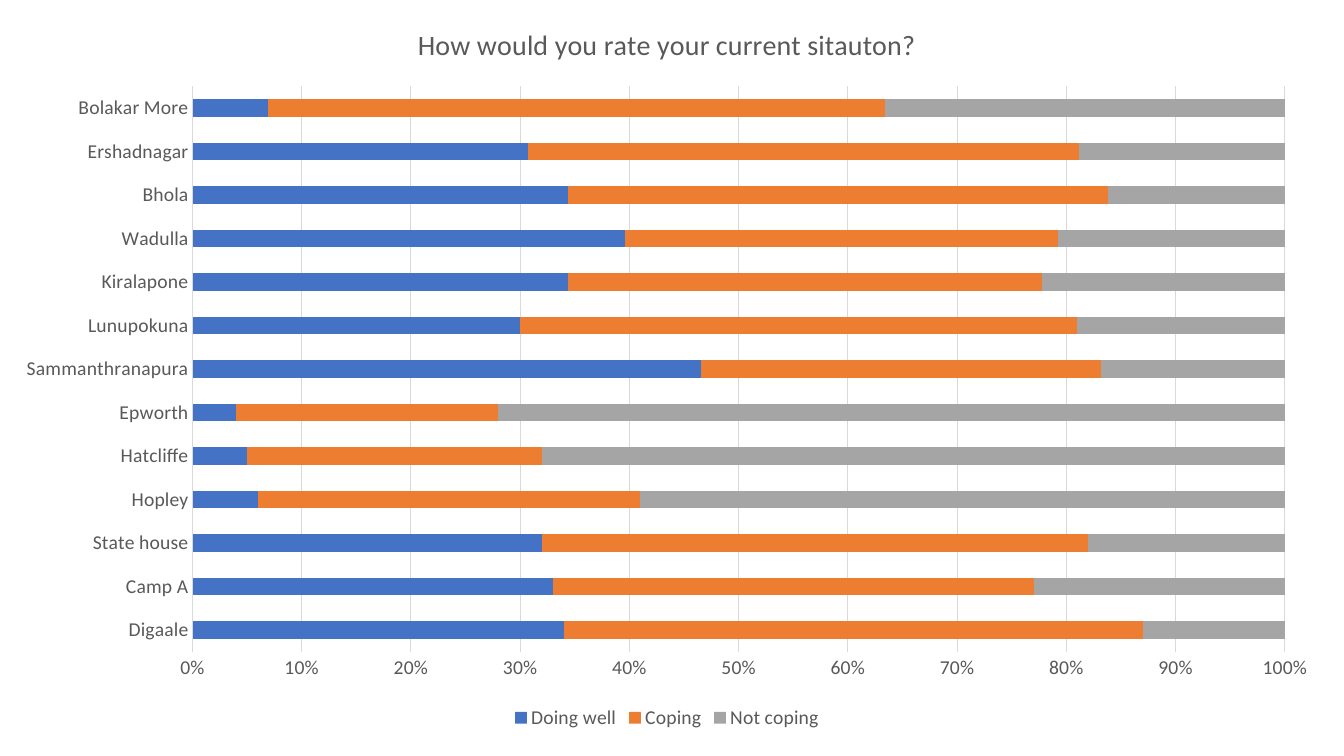
from dataclasses import dataclass

from pptx import Presentation
from pptx.chart.chart import Chart
from pptx.chart.data import CategoryChartData
from pptx.dml.color import RGBColor
from pptx.enum.chart import XL_CHART_TYPE, XL_LEGEND_POSITION, XL_TICK_MARK
from pptx.text.text import Font
from pptx.util import Emu, Pt

STACKED_BAR = XL_CHART_TYPE.BAR_STACKED_100
BOTTOM = XL_LEGEND_POSITION.BOTTOM
NO_TICK = XL_TICK_MARK.NONE

EMU_PER_PX = 914400 / 100.8
SLIDE_WIDTH, SLIDE_HEIGHT = 1344, 756
CHART_WIDTH, CHART_HEIGHT = 1334, 734

BLUE = RGBColor(0x44, 0x72, 0xC4)
ORANGE = RGBColor(0xED, 0x7D, 0x31)
GREY = RGBColor(0xA5, 0xA5, 0xA5)
TEXT_GREY = RGBColor(0x59, 0x59, 0x59)
LINE_GREY = RGBColor(0xD9, 0xD9, 0xD9)


@dataclass(frozen=True)
class Rating:
    name: str
    color: RGBColor
    percentages: tuple[int, ...]


SETTLEMENTS = (
    "Digaale", "Camp A", "State house", "Hopley", "Hatcliffe", "Epworth",
    "Sammanthranapura", "Lunupokuna", "Kiralapone", "Wadulla", "Bhola",
    "Ershadnagar", "Bolakar More",
)
RATINGS = (
    Rating("Doing well", BLUE, (34, 33, 32, 6, 5, 4, 47, 30, 34, 40, 34, 31, 7)),
    Rating("Coping", ORANGE, (53, 44, 50, 35, 27, 24, 37, 51, 43, 40, 49, 51, 57)),
    Rating("Not coping", GREY, (13, 23, 18, 59, 68, 72, 17, 19, 22, 21, 16, 19, 37)),
)


def px(length: int) -> Emu:
    return Emu(round(length * EMU_PER_PX))


def style_font(font: Font, size: int) -> None:
    font.name = "Calibri"
    font.size = Pt(size)
    font.bold = False
    font.color.rgb = TEXT_GREY


def style_title(chart: Chart, question: str) -> None:
    chart.has_title = True
    title = chart.chart_title
    title.include_in_layout = False
    paragraph = title.text_frame.paragraphs[0]
    paragraph.text = question
    style_font(paragraph.runs[0].font, 20)


def style_axes(chart: Chart) -> None:
    settlements, shares = chart.category_axis, chart.value_axis
    for axis in (settlements, shares):
        axis.major_tick_mark = NO_TICK
        axis.minor_tick_mark = NO_TICK
        style_font(axis.tick_labels.font, 14)
    settlements.has_major_gridlines = False
    shares.has_major_gridlines = True
    for line in (settlements.format.line, shares.major_gridlines.format.line):
        line.color.rgb = LINE_GREY
        line.width = Pt(0.75)
    shares.format.line.fill.background()
    shares.tick_labels.number_format = "0%"
    shares.tick_labels.number_format_is_linked = False


def style_bars(chart: Chart) -> None:
    plot = chart.plots[0]
    plot.gap_width = 150
    plot.overlap = 100
    plot.vary_by_categories = False
    for series, rating in zip(plot.series, RATINGS):
        series.invert_if_negative = False
        series.format.fill.solid()
        series.format.fill.fore_color.rgb = rating.color


def style_legend(chart: Chart) -> None:
    chart.has_legend = True
    chart.legend.position = BOTTOM
    chart.legend.include_in_layout = False
    style_font(chart.legend.font, 14)


def main() -> None:
    presentation = Presentation()
    presentation.slide_width = px(SLIDE_WIDTH)
    presentation.slide_height = px(SLIDE_HEIGHT)
    slide = presentation.slides.add_slide(presentation.slide_layouts[6])

    survey = CategoryChartData(number_format="0")
    survey.categories = SETTLEMENTS
    for rating in RATINGS:
        survey.add_series(rating.name, rating.percentages)

    chart = slide.shapes.add_chart(
        STACKED_BAR, px(0), px(0), px(CHART_WIDTH), px(CHART_HEIGHT), survey
    ).chart
    style_font(chart.font, 10)
    style_title(chart, "How would you rate your current sitauton?")
    style_axes(chart)
    style_bars(chart)
    style_legend(chart)
    presentation.save("out.pptx")


if __name__ == "__main__":
    main()
